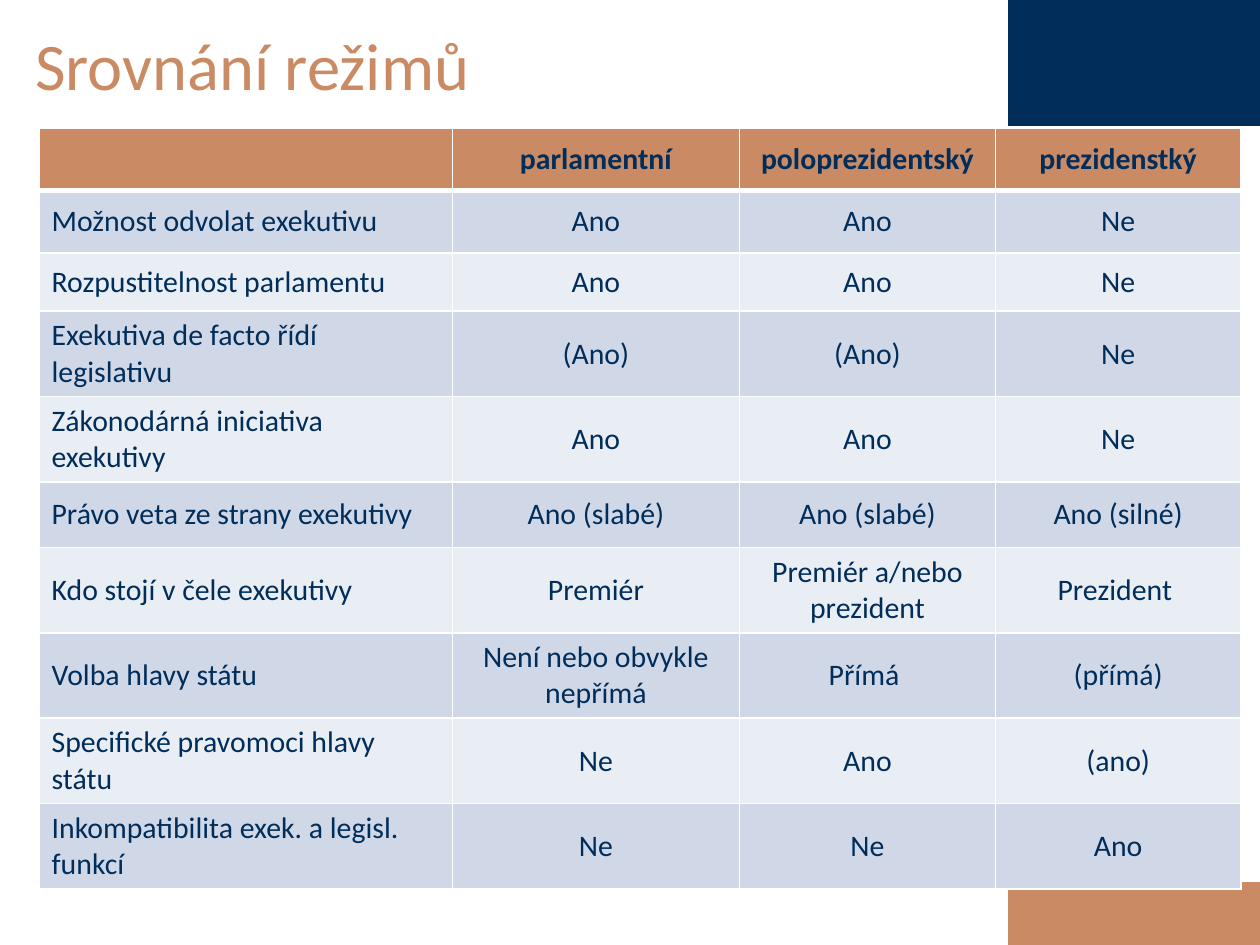
from dataclasses import dataclass
from typing import NamedTuple

from lxml.etree import SubElement
from pptx import Presentation
from pptx.dml.color import RGBColor
from pptx.enum.text import MSO_ANCHOR, MSO_AUTO_SIZE, PP_ALIGN
from pptx.oxml.ns import qn
from pptx.util import Inches, Pt


@dataclass(frozen=True)
class Theme:
    font: str = "Calibri"
    navy: str = "002D5A"
    copper: str = "CA8A64"
    line: str = "FFFFFF"
    bands: tuple = ("D0D8E8", "E9EDF4")
    title: int = 38
    body: int = 17


class Band(NamedTuple):
    points: tuple
    color: str


THEME = Theme()
WIDE, HIGH = 10, 7.5
COLS = (3.28, 2.28, 2.03, 1.95)
TALL = 0.66
ROWS = (0.49, 0.5, 0.46, TALL, TALL, 0.52) + (TALL,) * 4
LEFT, TOP = 0.31, 1.02

BANDS = (
    Band(((7.94, 0.63), (8.09, 0), (WIDE, 0), (WIDE, 0.63)), THEME.navy),
    Band(((7.78, HIGH), (7.93, 6.9), (WIDE, 6.9), (WIDE, HIGH)), THEME.copper),
)

REGIMES = (
    ("", "parlamentní", "poloprezidentský", "prezidenstký"),
    ("Možnost odvolat exekutivu", "Ano", "Ano", "Ne"),
    ("Rozpustitelnost parlamentu", "Ano", "Ano", "Ne"),
    ("Exekutiva de facto řídí legislativu", "(Ano)", "(Ano)", "Ne"),
    ("Zákonodárná iniciativa exekutivy", "Ano", "Ano", "Ne"),
    ("Právo veta ze strany exekutivy", "Ano (slabé)", "Ano (slabé)", "Ano (silné)"),
    ("Kdo stojí v čele exekutivy", "Premiér", "Premiér a/nebo prezident", "Prezident "),
    ("Volba hlavy státu", "Není nebo obvykle nepřímá", "Přímá ", "(přímá)"),
    ("Specifické pravomoci hlavy státu", "Ne", "Ano", "(ano)"),
    ("Inkompatibilita exek. a legisl. funkcí", "Ne", "Ne", "Ano"),
)


def style(para, size: int, color: str, align, bold: bool = False) -> None:
    para.alignment = align
    font = para.font
    font.name, font.size, font.bold = THEME.font, Pt(size), bold
    font.color.rgb = RGBColor.from_string(color)


def paint(fill, color: str) -> None:
    fill.solid()
    fill.fore_color.rgb = RGBColor.from_string(color)


def draw_band(slide, band: Band) -> None:
    first, *rest = band.points
    pen = slide.shapes.build_freeform(*first, scale=Inches(1))
    pen.add_line_segments(rest, close=True)
    shape = pen.convert_to_shape()
    shape.shadow.inherit = False
    paint(shape.fill, band.color)
    shape.line.fill.background()


def draw_title(slide, text: str) -> None:
    title = slide.shapes.title
    title.left, title.top = Inches(0), Inches(0.14)
    title.width, title.height = Inches(9.82), Inches(0.73)
    frame = title.text_frame
    frame.text = text
    frame.word_wrap, frame.auto_size = True, MSO_AUTO_SIZE.NONE
    frame.vertical_anchor = MSO_ANCHOR.MIDDLE
    frame.margin_left = frame.margin_right = Inches(0.28)
    style(frame.paragraphs[0], THEME.title, THEME.copper, PP_ALIGN.LEFT)


def edge(cell, head: bool, below: bool) -> None:
    widths = {"L": 1, "R": 1, "T": 3 if below else 1, "B": 3 if head else 1}
    props = cell._tc.get_or_add_tcPr()
    for side, width in widths.items():
        line = SubElement(props, qn(f"a:ln{side}"), w=str(Pt(width)))
        solid = SubElement(line, qn("a:solidFill"))
        SubElement(solid, qn("a:srgbClr"), val=THEME.line)


def draw_table(slide, data: tuple) -> None:
    frame = slide.shapes.add_table(
        len(ROWS), len(COLS), Inches(LEFT), Inches(TOP),
        Inches(sum(COLS)), Inches(sum(ROWS)))
    table = frame.table
    for col, width in zip(table.columns, COLS):
        col.width = Inches(width)
    for r, (row, height) in enumerate(zip(table.rows, ROWS)):
        row.height = Inches(height)
        head = r == 0
        color = THEME.copper if head else THEME.bands[(r - 1) % 2]
        for c, cell in enumerate(row.cells):
            cell.text = data[r][c]
            cell.vertical_anchor = MSO_ANCHOR.MIDDLE
            align = PP_ALIGN.CENTER if c else PP_ALIGN.LEFT
            style(cell.text_frame.paragraphs[0], THEME.body, THEME.navy, align, head)
            edge(cell, head, r == 1)
            paint(cell.fill, color)


def main() -> None:
    deck = Presentation()
    deck.slide_width, deck.slide_height = Inches(WIDE), Inches(HIGH)
    slide = deck.slides.add_slide(deck.slide_layouts[5])
    # Corner bands, kept behind the title
    for band in BANDS:
        draw_band(slide, band)
    slide.shapes._spTree.append(slide.shapes.title._element)
    # Heading and comparison
    draw_title(slide, "Srovnání režimů")
    draw_table(slide, REGIMES)
    deck.save("out.pptx")


if __name__ == "__main__":
    main()
